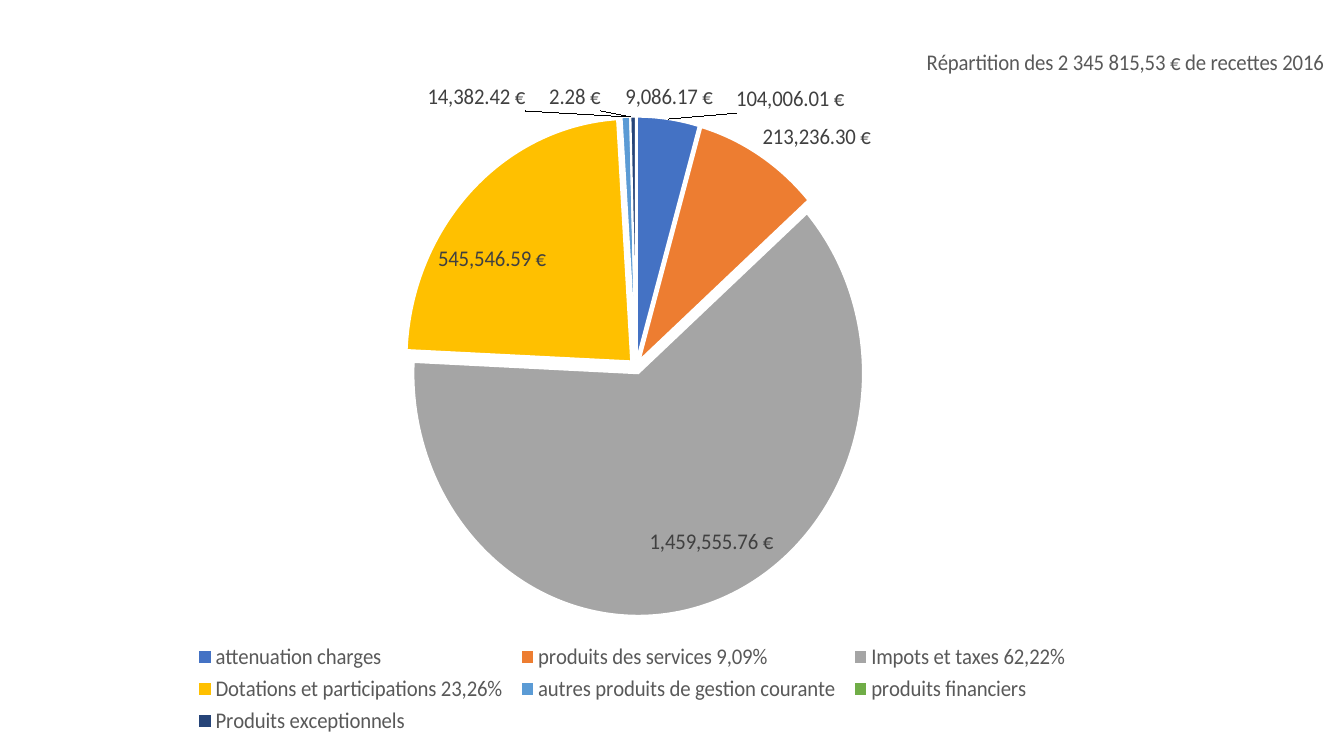
from copy import deepcopy

from pptx import Presentation
from pptx.chart.data import CategoryChartData
from pptx.dml.color import RGBColor
from pptx.enum.chart import XL_CHART_TYPE, XL_LABEL_POSITION, XL_LEGEND_POSITION
from pptx.oxml import parse_xml
from pptx.oxml.ns import nsdecls, qn
from pptx.util import Cm, Pt

PIE = XL_CHART_TYPE.PIE
BOTTOM = XL_LEGEND_POSITION.BOTTOM
OUTSIDE = XL_LABEL_POSITION.OUTSIDE_END
CENTER = XL_LABEL_POSITION.CENTER

TITLE = "Répartition des 2 345 815,53 € de recettes 2016"
EURO_FORMAT = '#,##0.00\\ "€"'
EXPLOSION = 3
RECETTES = [
    ("attenuation charges", 104006.01, "4472C4", OUTSIDE, (5.6, 0)),
    ("produits des services 9,09%", 213236.30, "ED7D31", OUTSIDE, None),
    ("Impots et taxes 62,22%", 1459555.76, "A5A5A5", CENTER, (3, 7.7)),
    ("Dotations et participations 23,26%", 545546.59, "FFC000", CENTER, (-4.9, -2.4)),
    ("autres produits de gestion courante", 14382.42, "5B9BD5", OUTSIDE, (-12.4, 0)),
    ("produits financiers", 2.28, "70AD47", OUTSIDE, (-4.6, 0)),
    ("Produits exceptionnels", 9086.17, "264478", OUTSIDE, (3, 0)),
]


def color(value):
    return RGBColor.from_string(value)


def layout(x, y, size=(), target="", mode="edge"):
    parts = [f'<c:layoutTarget val="{target}"/>'] if target else []
    if mode:
        parts += [f'<c:{axis}Mode val="{mode}"/>' for axis in "xy"]
    for tag, percent in zip("xywh", (x, y, *size)):
        parts.append(f'<c:{tag} val="{percent / 100:.4f}"/>')
    body = "".join(parts)
    return parse_xml(
        f'<c:layout {nsdecls("c")}><c:manualLayout>{body}</c:manualLayout></c:layout>'
    )


def place(element, new_layout, index):
    for old in element.findall(qn("c:layout")):
        element.remove(old)
    element.insert(index, new_layout)


class RevenueSlide:
    text_style = {"name": "Calibri", "size": Pt(16), "bold": False}
    gray = "595959"
    dark = "404040"
    border = "FFFFFF"

    def __init__(self, deck):
        self.page = deck.slides.add_slide(deck.slide_layouts[6])

    def style_font(self, font, shade):
        for name, value in self.text_style.items():
            setattr(font, name, value)
        font.color.rgb = color(shade)

    def add_pie(self, left, top, width, height):
        data = CategoryChartData(number_format=EURO_FORMAT)
        data.categories = [row[0] for row in RECETTES]
        data.add_series("Series 1", [row[1] for row in RECETTES])
        frame = self.page.shapes.add_chart(
            PIE, Cm(left), Cm(top), Cm(width), Cm(height), data
        )
        self.chart = frame.chart
        self.style_font(self.chart.font, self.gray)
        plot = self.chart.plots[0]
        plot.vary_by_categories = True
        plot_area = self.chart._chartSpace.chart.plotArea
        place(plot_area, layout(4, 12.7, (92.7, 70.1), "inner"), 0)
        series = plot.series[0]
        series._element.find(qn("c:tx")).addnext(
            parse_xml(f'<c:explosion {nsdecls("c")} val="{EXPLOSION}"/>')
        )
        for index, row in enumerate(RECETTES):
            slice_format = series.points[index].format
            slice_format.fill.solid()
            slice_format.fill.fore_color.rgb = color(row[2])
            slice_format.line.color.rgb = color(self.border)
            slice_format.line.width = Pt(1.5)
        return series

    def add_labels(self, series):
        labels = series.data_labels
        settings = {
            "show_value": True,
            "number_format": EURO_FORMAT,
            "number_format_is_linked": False,
            "position": OUTSIDE,
        }
        for name, value in settings.items():
            setattr(labels, name, value)
        self.style_font(labels.font, self.dark)
        number_format = labels._element.find(qn("c:numFmt"))
        for index, (_, _, _, position, offset) in enumerate(RECETTES):
            if offset is None:
                continue
            label = series.points[index].data_label
            self.style_font(label.font, self.dark)
            label.position = position
            element = labels._element.findall(qn("c:dLbl"))[-1]
            place(element, layout(*offset, mode=""), 1)
            element.insert(2, deepcopy(number_format))

    def add_title(self, text, x, y):
        self.chart.has_title = True
        title = self.chart.chart_title
        para = title.text_frame.paragraphs[0]
        span = para.add_run()
        span.text = text
        self.style_font(span.font, self.gray)
        place(title._element, layout(x, y), 1)

    def add_legend(self, x, y, size):
        self.chart.has_legend = True
        legend = self.chart.legend
        legend.position = BOTTOM
        legend.include_in_layout = False
        self.style_font(legend.font, self.gray)
        place(legend._element, layout(x, y, size), 1)


def main():
    deck = Presentation()
    deck.slide_width = Cm(33.87)
    deck.slide_height = Cm(19.05)
    slide = RevenueSlide(deck)
    series = slide.add_pie(0.76, 0.66, 32.72, 17.96)
    slide.add_labels(series)
    slide.add_title(TITLE, 74.2, 2.4)
    slide.add_legend(13, 86, (74, 14))
    deck.save("out.pptx")


if __name__ == "__main__":
    main()
